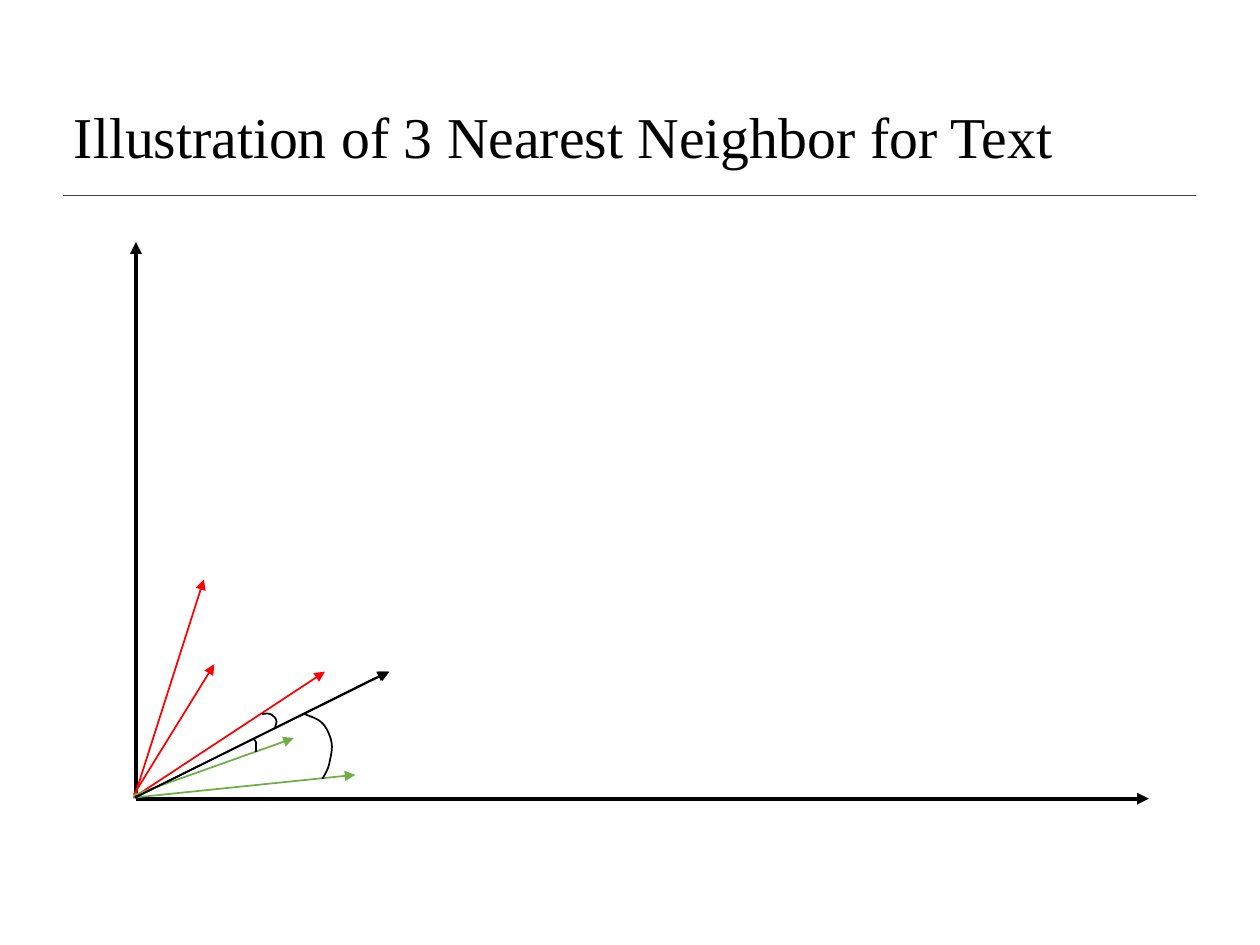
from dataclasses import dataclass

from lxml import etree
from pptx import Presentation
from pptx import util as u
from pptx.dml.color import RGBColor
from pptx.enum import shapes, text
from pptx.oxml import ns

BLACK, GREY, RED, GREEN = "000000", "404040", "FF0000", "70AD47"
FONT = "Times New Roman"
CURVE_STEPS = 10

Point = tuple[float, float]  # centimetres


@dataclass
class Line:
    start: Point
    end: Point
    color: str = BLACK
    width: float = 1
    arrow: bool = True


RULE = Line((1.27, 3.94), (24.1, 3.94), GREY, arrow=False)
AXES = [
    Line((2.74, 16.08), (2.74, 4.88), width=2.25),
    Line((2.74, 16.1), (23.16, 16.1), width=2.25),
]
VECTORS = [
    Line((2.72, 16.03), (4.11, 11.68), RED),
    Line((2.69, 16.03), (4.32, 13.39), RED),
    Line((2.69, 16.08), (6.55, 13.54), RED),
    Line((2.69, 16.08), (7.16, 15.62), GREEN),
    Line((2.69, 16.03), (5.92, 14.88), GREEN),
    Line((2.72, 16.08), (7.82, 13.54)),
    Line((2.72, 16.08), (7.85, 13.54)),
]
# Each arc: a start point, then two control points and an end point per curve.
ANGLE_ARCS: list[list[Point]] = [
    [(5.11, 14.88), (5.13, 14.91), (5.14, 14.93), (5.16, 14.96),
     (5.16, 15.01), (5.16, 15.09), (5.16, 15.16)],
    [(5.28, 14.4), (5.36, 14.38), (5.41, 14.38), (5.46, 14.4),
     (5.51, 14.43), (5.56, 14.48), (5.56, 14.5),
     (5.59, 14.55), (5.56, 14.61), (5.54, 14.68)],
    [(6.15, 14.4), (6.27, 14.45), (6.4, 14.48), (6.5, 14.58),
     (6.58, 14.66), (6.65, 14.81), (6.68, 14.94),
     (6.71, 15.06), (6.68, 15.21), (6.65, 15.34),
     (6.63, 15.47), (6.58, 15.57), (6.5, 15.7)],
]


def rgb(color: str) -> RGBColor:
    return RGBColor.from_string(color)


def to_cm(point: Point) -> tuple[u.Cm, u.Cm]:
    return u.Cm(point[0]), u.Cm(point[1])


def draw_line(page, line: Line) -> None:
    connector = page.shapes.add_connector(
        shapes.MSO_CONNECTOR.STRAIGHT, *to_cm(line.start), *to_cm(line.end))
    connector.line.color.rgb = rgb(line.color)
    connector.line.width = u.Pt(line.width)
    properties = connector._element.spPr
    if line.arrow:
        outline = properties.find(ns.qn("a:ln"))
        etree.SubElement(outline, ns.qn("a:tailEnd"), type="triangle")
    etree.SubElement(properties, ns.qn("a:effectLst"))


def bezier(p0: Point, p1: Point, p2: Point, p3: Point) -> list[Point]:
    """Return points along a cubic curve, leaving out its start."""
    points = []
    for step in range(1, CURVE_STEPS + 1):
        t = step / CURVE_STEPS
        weights = ((1 - t) ** 3, 3 * t * (1 - t) ** 2, 3 * t * t * (1 - t), t ** 3)
        x, y = (sum(w * p[axis] for w, p in zip(weights, (p0, p1, p2, p3)))
                for axis in (0, 1))
        points.append((x, y))
    return points


def draw_arc(page, knots: list[Point]) -> None:
    points = [point for i in range(0, len(knots) - 1, 3)
              for point in bezier(*knots[i:i + 4])]
    builder = page.shapes.build_freeform(*to_cm(knots[0]))
    builder.add_line_segments([to_cm(point) for point in points], close=False)
    arc = builder.convert_to_shape()
    arc.shadow.inherit = False
    arc.fill.background()
    arc.line.color.rgb = rgb(BLACK)
    arc.line.width = u.Pt(1)


def add_text(page, words: str, *, left: float, top: float, width: float,
             height: float, size: float, color: str = BLACK,
             spacing: float = 1) -> None:
    box = page.shapes.add_textbox(*to_cm((left, top)), *to_cm((width, height)))
    frame = box.text_frame
    frame.word_wrap = True
    frame.vertical_anchor = text.MSO_ANCHOR.MIDDLE
    para = frame.paragraphs[0]
    para.line_spacing = spacing
    span = para.add_run()
    span.text = words
    span.font.name = FONT
    span.font.size = u.Pt(size)
    span.font.color.rgb = rgb(color)


def main() -> None:
    deck = Presentation()
    deck.slide_width, deck.slide_height = to_cm((25.4, 19.05))
    page = deck.slides.add_slide(deck.slide_layouts[6])

    draw_line(page, RULE)
    add_text(page, "Illustration of 3 Nearest Neighbor for Text", left=1.24,
             top=1.78, width=22.86, height=2.06, size=33, spacing=0.9)
    for line in AXES + VECTORS:
        draw_line(page, line)
    for arc in ANGLE_ARCS:
        draw_arc(page, arc)

    deck.save("out.pptx")


if __name__ == "__main__":
    main()
